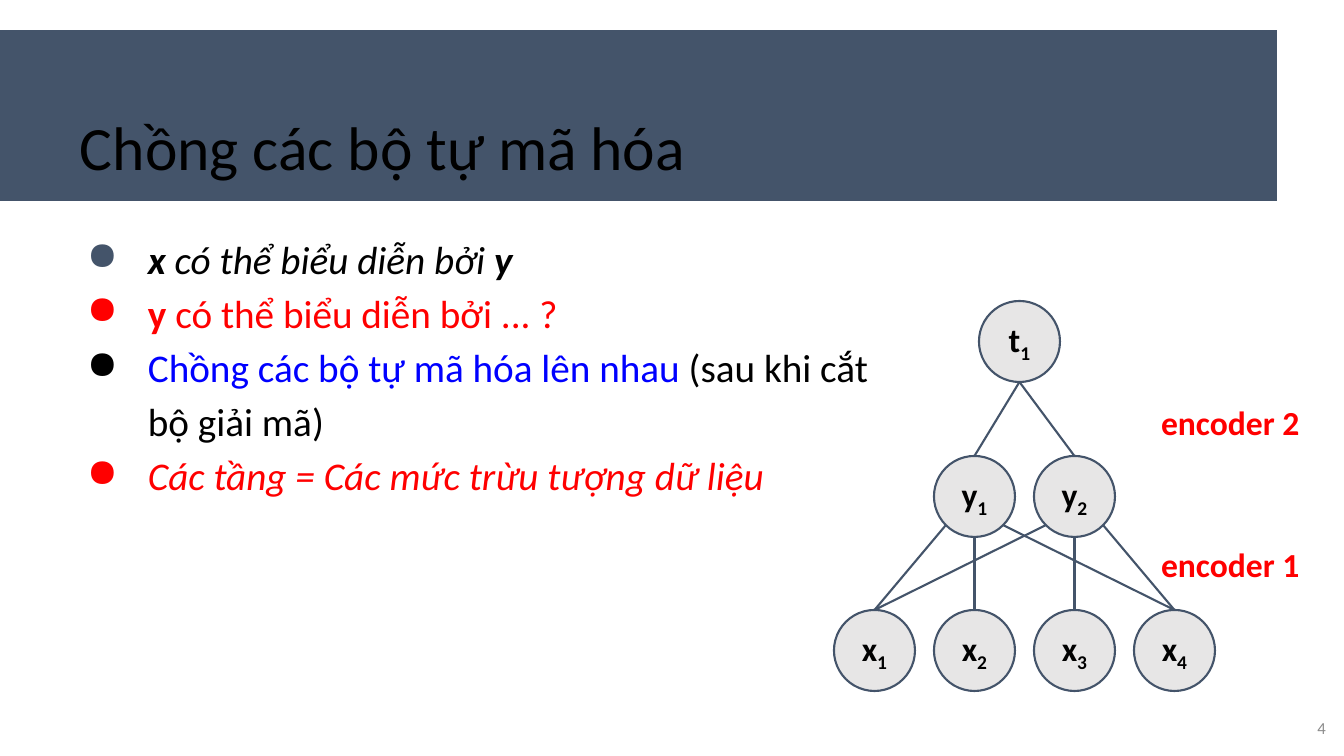
from dataclasses import dataclass
from math import sqrt

from lxml import etree
from pptx import Presentation
from pptx.dml.color import RGBColor
from pptx.enum.shapes import MSO_CONNECTOR, MSO_SHAPE
from pptx.enum.text import MSO_ANCHOR, PP_ALIGN
from pptx.oxml.ns import qn
from pptx.util import Emu, Pt

LEFT, CENTER, RIGHT = PP_ALIGN.LEFT, PP_ALIGN.CENTER, PP_ALIGN.RIGHT
TOP, MIDDLE, BOTTOM = MSO_ANCHOR.TOP, MSO_ANCHOR.MIDDLE, MSO_ANCHOR.BOTTOM
RECTANGLE, OVAL = MSO_SHAPE.RECTANGLE, MSO_SHAPE.OVAL
STRAIGHT = MSO_CONNECTOR.STRAIGHT


@dataclass(frozen=True)
class Theme:
    font: str = "Calibri"
    slate: str = "44546A"
    node: str = "E7E6E6"
    black: str = "000000"
    red: str = "FF0000"
    blue: str = "0000FF"
    gray: str = "8C8C8C"
    title: int = 44
    body: int = 28
    label: int = 24
    number: int = 12
    line: float = 1.5


THEME = Theme()

TITLE = "Chồng các bộ tự mã hóa"
PAGE_NUMBER = "4"
BULLETS = [
    (THEME.slate, [("x", THEME.black, "bi"), (" có thể biểu diễn bởi ", THEME.black, "i"),
                   ("y", THEME.black, "bi")]),
    (THEME.red, [("y ", THEME.red, "b"), ("có thể biểu diễn bởi ... ?", THEME.red, "")]),
    (THEME.black, [("Chồng các bộ tự mã hóa lên nhau", THEME.blue, ""),
                   (" (sau khi cắt bộ giải mã)", THEME.black, "")]),
    (THEME.red, [("Các tầng = Các mức trừu tượng dữ liệu", THEME.red, "i")]),
]
LAYERS = [("x", 4, 834, 610), ("y", 2, 934, 456), ("t", 1, 979, 301)]
EDGES = [
    ("x1", "y1", "left"), ("x2", "y1", "middle"), ("x3", "y2", "middle"), ("x4", "y2", "right"),
    ("x1", "y2", "left"), ("x4", "y1", "right"), ("y1", "t1", "middle"), ("y2", "t1", "middle"),
]
ENCODERS = [("encoder 1", 531), ("encoder 2", 389)]

SLIDE_WIDTH, SLIDE_HEIGHT = 1344, 756
INSET = 13
HANG_LEFT, HANG_INDENT = 68, -61
DIAMETER, PITCH = 81, 100
RADIUS = DIAMETER / 2
DIAGONAL = RADIUS / sqrt(2)
ANCHORS = {"left": (-DIAGONAL, DIAGONAL), "middle": (0, RADIUS), "right": (DIAGONAL, DIAGONAL)}


def px(length):
    return Emu(round(length * 914400 / 100.8))


def color(value):
    return RGBColor.from_string(value)


def add_span(para, text, size, tint, style="", baseline=None):
    span = para.add_run()
    span.text = text
    font = span.font
    font.name, font.size = THEME.font, Pt(size)
    font.bold, font.italic = "b" in style, "i" in style
    font.color.rgb = color(tint)
    if baseline:
        span._r.get_or_add_rPr().set("baseline", str(baseline))


def set_frame(shape, anchor, align=LEFT):
    frame = shape.text_frame
    frame.word_wrap = True
    frame.vertical_anchor = anchor
    frame.margin_left = frame.margin_right = px(INSET)
    frame.margin_top = frame.margin_bottom = px(INSET)
    frame.paragraphs[0].alignment = align
    return frame


def add_box(page, left, top, width, height, anchor=TOP, align=LEFT):
    box = page.shapes.add_textbox(px(left), px(top), px(width), px(height))
    return set_frame(box, anchor, align)


def add_shape(page, kind, left, top, width, height, fill):
    shape = page.shapes.add_shape(kind, px(left), px(top), px(width), px(height))
    shape.shadow.inherit = False
    shape.fill.solid()
    shape.fill.fore_color.rgb = color(fill)
    return shape


def set_bullet(para, tint):
    properties = para._p.get_or_add_pPr()
    properties.set("marL", str(px(HANG_LEFT)))
    properties.set("indent", str(px(HANG_INDENT)))
    bullet_color = etree.SubElement(properties, qn("a:buClr"))
    etree.SubElement(bullet_color, qn("a:srgbClr")).set("val", tint)
    etree.SubElement(properties, qn("a:buChar")).set("char", "●")


def add_header(page):
    band = add_shape(page, RECTANGLE, 0, 30, 1277, 171, THEME.slate)
    band.line.fill.background()
    para = add_box(page, 67, 30, 1210, 167, BOTTOM).paragraphs[0]
    para.line_spacing = 0.9
    add_span(para, TITLE, THEME.title, THEME.black)


def add_bullets(page):
    frame = add_box(page, 67, 215, 841, 509)
    for index, (tint, spans) in enumerate(BULLETS):
        para = frame.add_paragraph() if index else frame.paragraphs[0]
        para.line_spacing = 1.15
        set_bullet(para, tint)
        for text, span_tint, style in spans:
            add_span(para, text, THEME.body, span_tint, style)


def add_nodes(page):
    centers = {}
    for letter, count, start, top in LAYERS:
        for index in range(count):
            left = start + index * PITCH
            number = str(index + 1)
            node = add_shape(page, OVAL, left, top, DIAMETER, DIAMETER, THEME.node)
            node.line.color.rgb = color(THEME.slate)
            node.line.width = Pt(THEME.line)
            para = set_frame(node, MIDDLE, CENTER).paragraphs[0]
            add_span(para, letter, THEME.label, THEME.black, "b")
            add_span(para, number, THEME.label, THEME.black, "b", -25000)
            centers[letter + number] = (left + RADIUS, top + RADIUS)
    return centers


def add_edges(page, centers):
    for lower, upper, side in EDGES:
        lower_x, lower_y = centers[lower]
        upper_x, upper_y = centers[upper]
        shift_x, shift_y = ANCHORS[side]
        edge = page.shapes.add_connector(STRAIGHT, px(lower_x), px(lower_y - RADIUS),
                                         px(upper_x + shift_x), px(upper_y + shift_y))
        edge.line.color.rgb = color(THEME.slate)
        edge.line.width = Pt(THEME.line)
        etree.SubElement(edge._element.spPr, qn("a:effectLst"))


def main():
    deck = Presentation()
    deck.slide_width, deck.slide_height = px(SLIDE_WIDTH), px(SLIDE_HEIGHT)
    page = deck.slides.add_slide(deck.slide_layouts[6])
    add_header(page)
    add_bullets(page)
    number_frame = add_box(page, 1258, 699, 81, 57, MIDDLE, RIGHT)
    add_span(number_frame.paragraphs[0], PAGE_NUMBER, THEME.number, THEME.gray)
    add_edges(page, add_nodes(page))
    for text, top in ENCODERS:
        para = add_box(page, 1148, top, 191, 59).paragraphs[0]
        add_span(para, text, THEME.label, THEME.red, "b")
    deck.save("out.pptx")


if __name__ == "__main__":
    main()
